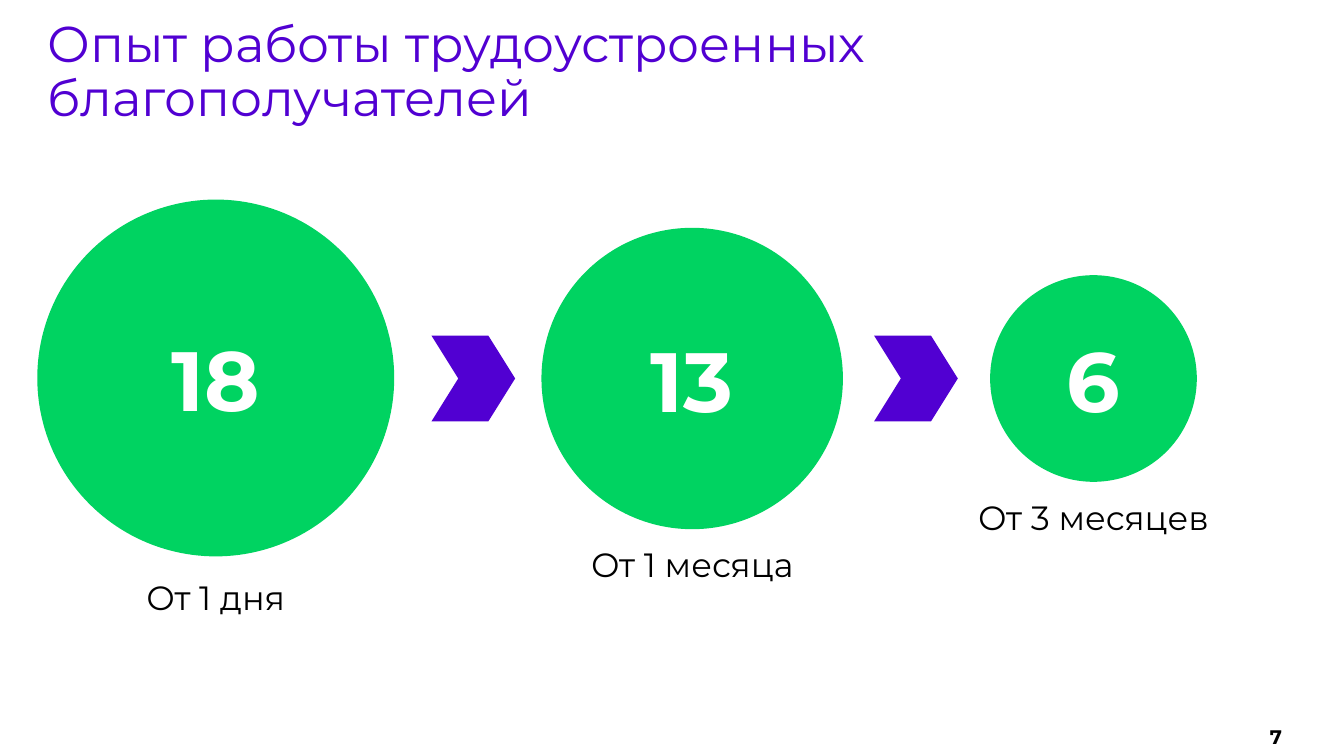
from dataclasses import dataclass

from pptx import Presentation
from pptx.dml.color import RGBColor
from pptx.enum.shapes import MSO_SHAPE
from pptx.enum.text import MSO_ANCHOR, MSO_AUTO_SIZE, PP_ALIGN
from pptx.shapes.autoshape import Shape
from pptx.slide import Slide
from pptx.util import Emu, Pt

OVAL, CHEVRON = MSO_SHAPE.OVAL, MSO_SHAPE.CHEVRON
TOP, MIDDLE = MSO_ANCHOR.TOP, MSO_ANCHOR.MIDDLE
LEFT, CENTER = PP_ALIGN.LEFT, PP_ALIGN.CENTER
GROW = MSO_AUTO_SIZE.SHAPE_TO_FIT_TEXT

PX = 9144  # EMU per px, 100 px to the inch
AXIS_Y = 375  # common centre line of circles and chevrons


@dataclass(frozen=True)
class Theme:
    font: str = "Montserrat"
    purple: str = "5100D2"
    green: str = "00D361"
    white: str = "FFFFFF"
    black: str = "000000"
    title: int = 36
    value: int = 60
    label: int = 24
    page: int = 14


@dataclass(frozen=True)
class Box:
    x: int
    y: int
    w: int
    h: int

    def emu(self) -> tuple[Emu, ...]:
        return tuple(Emu(v * PX) for v in (self.x, self.y, self.w, self.h))


@dataclass(frozen=True)
class Stage:
    value: str
    label: str
    x: int
    size: int
    label_gap: int
    label_h: int
    label_extra: int = 0  # how far the label reaches past each side


THEME = Theme()
STAGES = (
    Stage("18", "От 1 дня", 37, 354, 15, 50),
    Stage("13", "От 1 месяца", 537, 299, 10, 50),
    Stage("6", "От 3 месяцев", 982, 205, 10, 91, 24),
)
CHEVRON_XS = (428, 867)
CHEVRON_W, CHEVRON_H = 83, 85


def write(sp: Shape, text: str, size: int, color: str, bold: bool = False,
          align: PP_ALIGN = CENTER, anchor: MSO_ANCHOR = MIDDLE) -> None:
    tf = sp.text_frame
    tf.word_wrap = True
    tf.vertical_anchor = anchor
    p = tf.paragraphs[0]
    p.alignment = align
    r = p.add_run()
    r.text = text
    r.font.name = THEME.font
    r.font.size = Pt(size)
    r.font.bold = bold
    r.font.color.rgb = RGBColor.from_string(color)


def add_filled(s: Slide, kind: MSO_SHAPE, box: Box, color: str) -> Shape:
    sp = s.shapes.add_shape(kind, *box.emu())
    sp.shadow.inherit = False
    sp.fill.solid()
    sp.fill.fore_color.rgb = RGBColor.from_string(color)
    sp.line.fill.background()
    return sp


def add_stage(s: Slide, stage: Stage) -> None:
    y = AXIS_Y - stage.size // 2
    circle = add_filled(s, OVAL, Box(stage.x, y, stage.size, stage.size), THEME.green)
    write(circle, stage.value, THEME.value, THEME.white, bold=True)

    box = Box(stage.x - stage.label_extra, y + stage.size + stage.label_gap,
              stage.size + 2 * stage.label_extra, stage.label_h)
    label = s.shapes.add_textbox(*box.emu())
    write(label, stage.label, THEME.label, THEME.black, anchor=TOP)
    label.text_frame.auto_size = GROW


def add_chevron(s: Slide, x: int) -> None:
    box = Box(x, AXIS_Y - CHEVRON_H // 2, CHEVRON_W, CHEVRON_H)
    sp = add_filled(s, CHEVRON, box, THEME.purple)
    sp.adjustments[0] = 0.32


def main() -> None:
    prs = Presentation()
    prs.slide_width, prs.slide_height = Emu(1333 * PX), Emu(750 * PX)
    s = prs.slides.add_slide(prs.slide_layouts[6])

    # Title
    title = s.shapes.add_textbox(*Box(37, 0, 1260, 145).emu())
    write(title, "Опыт работы трудоустроенных благополучателей",
          THEME.title, THEME.purple, align=LEFT)
    title.text_frame.paragraphs[0].line_spacing = 0.9

    # Page number
    page = s.shapes.add_textbox(*Box(1236, 711, 59, 39).emu())
    write(page, "7", THEME.page, THEME.black, bold=True)

    # Circles with captions
    for stage in STAGES:
        add_stage(s, stage)

    # Chevrons between circles
    for x in CHEVRON_XS:
        add_chevron(s, x)

    prs.save("out.pptx")


if __name__ == "__main__":
    main()
